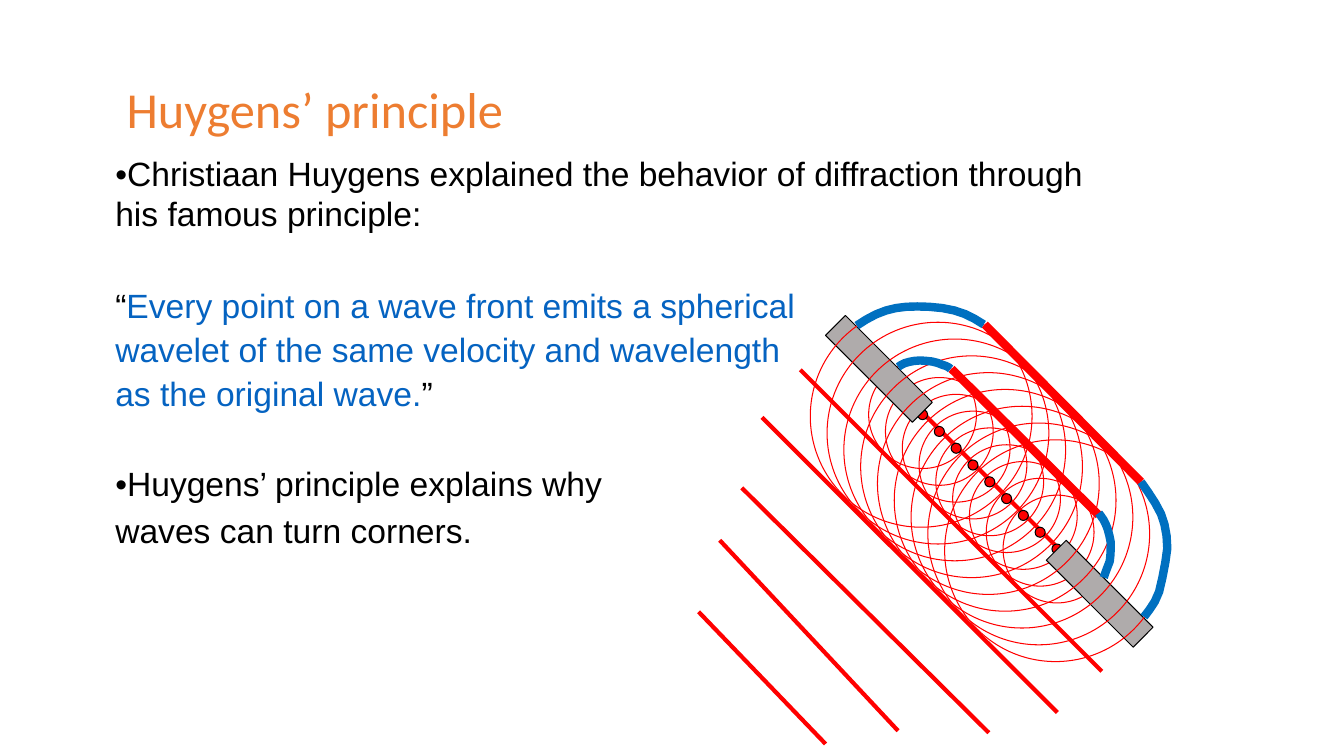
from dataclasses import dataclass

from lxml import etree
from pptx import Presentation
from pptx.dml.color import RGBColor
from pptx.enum.shapes import MSO_CONNECTOR, MSO_SHAPE
from pptx.enum.text import MSO_ANCHOR, MSO_AUTO_SIZE, PP_ALIGN
from pptx.oxml.ns import qn
from pptx.util import Pt

OVAL, RECTANGLE = MSO_SHAPE.OVAL, MSO_SHAPE.RECTANGLE
STRAIGHT = MSO_CONNECTOR.STRAIGHT
LEFT, TOP, BOTTOM = PP_ALIGN.LEFT, MSO_ANCHOR.TOP, MSO_ANCHOR.BOTTOM
NO_AUTOFIT = MSO_AUTO_SIZE.NONE

COLORS = {
    "white": "FFFFFF", "black": "000000", "title": "ED7D31", "quote": "0563C1",
    "wave": "FF0000", "bend": "0070C0", "barrier": "AFABAB",
}


@dataclass(frozen=True)
class Line:
    x1: float
    y1: float
    x2: float
    y2: float
    width: float = 3


@dataclass(frozen=True)
class Box:
    left: float
    top: float
    width: float
    height: float
    rotation: float = 0


@dataclass(frozen=True)
class Statement:
    runs: tuple[tuple[str, str], ...]
    space_before: float


STATEMENTS = (
    Statement((("•Christiaan Huygens explained the behavior of diffraction "
                "through his famous principle:", "black"),), 4.8),
    Statement((("“", "black"),
               ("Every point on a wave front emits a spherical", "quote")), 36.4),
    Statement((("wavelet of the same velocity and wavelength", "quote"),), 2.6),
    Statement((("as the original wave.", "quote"), ("”", "black")), 2.6),
    Statement((("•Huygens’ principle explains why", "black"),), 36),
    Statement((("waves can turn corners.", "black"),), 4.8),
)

APERTURE = Line(658, 293.8, 755.3, 391)
INCOMING_FRONTS = (
    Line(571.7, 264.2, 787, 479.5),
    Line(544.3, 298.1, 755.3, 509),
    Line(529.9, 348.5, 706.3, 523.4),
    Line(514.1, 385.9, 641.5, 522),
    Line(499, 437, 589.7, 531.4),
)
OUTGOING_FRONTS = (
    Line(703.4, 231.8, 815, 344.2, 6),
    Line(679.7, 263.5, 784.8, 367.9, 6),
)
BARRIERS = (Box(741.6, 414, 87.8, 20.2, 45), Box(583.9, 253.4, 87.8, 20.2, 45))

# Wavelet sources run diagonally along the aperture
SOURCES = [(659 + 12 * i, 296.2 + 12 * i) for i in range(9)]
LARGE_CENTERS = [(x - 1, y + 1.2) for x, y in SOURCES]
DOT, SMALL_WAVELET, LARGE_WAVELET = 7.2, 77, 158.4

# Cubic Bezier chains: a start point, then three points for each curve
BENT_FRONTS = (
    ((641.5, 262.1), (643.7, 260.6), (645.8, 259.2), (649.4, 258.5),
     (652.3, 257.8), (657.4, 257), (661.7, 257.8), (665.3, 257.8),
     (670.3, 259.2), (673.2, 260.6), (676.1, 261.4), (677.5, 262.1),
     (679, 263.5)),
    ((784.8, 366.5), (786.2, 368.6), (788.4, 370.8), (789.8, 374.4),
     (791.3, 377.3), (792.7, 383), (793.4, 387.4), (793.4, 391.7),
     (793.4, 396.7), (792.7, 401), (791.3, 404.6), (789.8, 408.2),
     (788.4, 412.6)),
    ((612, 232.6), (618.5, 228.2), (625.7, 223.9), (632.9, 221.8),
     (640.1, 219.6), (646.6, 218.9), (655.2, 218.9), (663.1, 218.9),
     (673.9, 219.6), (681.8, 221.8), (689.8, 223.9), (696.2, 227.5),
     (702.7, 231.8)),
    ((815, 344.2), (820.1, 351.4), (825.8, 359.3), (829.4, 367.2),
     (832.3, 374.4), (833.8, 382.3), (833.8, 391.7), (833, 400.3),
     (830.2, 414), (828, 422.6), (825.4, 430.6), (820.8, 435.8),
     (817.2, 440.6)),
)


def rgb(color: str) -> RGBColor:
    return RGBColor.from_string(COLORS[color])


def add_text(paragraph, text: str, *, font: str, size: float, color: str) -> None:
    run = paragraph.add_run()
    run.text = text
    run.font.name = font
    run.font.size = Pt(size)
    run.font.color.rgb = rgb(color)


def style(shape, fill: str | None, line: str | None, width: float = 0.75) -> None:
    shape.shadow.inherit = False
    if fill:
        shape.fill.solid()
        shape.fill.fore_color.rgb = rgb(fill)
    else:
        shape.fill.background()
    if line:
        shape.line.color.rgb = rgb(line)
        shape.line.width = Pt(width)
    else:
        shape.line.fill.background()


def add_box(shapes, kind, box: Box, fill: str | None, line: str | None):
    shape = shapes.add_shape(kind, Pt(box.left), Pt(box.top),
                             Pt(box.width), Pt(box.height))
    shape.rotation = box.rotation
    style(shape, fill, line)
    return shape


def add_circle(shapes, center: tuple[float, float], size: float,
               fill: str | None, line: str) -> None:
    x, y = center
    add_box(shapes, OVAL, Box(x - size / 2, y - size / 2, size, size), fill, line)


def add_front(shapes, front: Line) -> None:
    connector = shapes.add_connector(STRAIGHT, Pt(front.x1), Pt(front.y1),
                                     Pt(front.x2), Pt(front.y2))
    connector.line.color.rgb = rgb("wave")
    connector.line.width = Pt(front.width)
    etree.SubElement(connector.element.spPr, qn("a:effectLst"))


def curve_points(chain: tuple, steps: int = 3) -> list[tuple[int, int]]:
    points = []
    for start in range(0, len(chain) - 1, 3):
        controls = chain[start:start + 4]
        for step in range(1, steps + 1):
            t = step / steps
            weights = ((1 - t) ** 3, 3 * t * (1 - t) ** 2,
                       3 * t ** 2 * (1 - t), t ** 3)
            x, y = (sum(w * c[axis] for w, c in zip(weights, controls))
                    for axis in (0, 1))
            points.append((Pt(x), Pt(y)))
    return points


def add_bent_front(shapes, chain: tuple) -> None:
    builder = shapes.build_freeform(Pt(chain[0][0]), Pt(chain[0][1]))
    builder.add_line_segments(curve_points(chain), close=False)
    style(builder.convert_to_shape(), None, "bend", 6)


def add_title(slide) -> None:
    title = slide.shapes.title
    title.left, title.top, title.width, title.height = (
        Pt(83.2), Pt(32.4), Pt(702.7), Pt(70.6))
    frame = title.text_frame
    frame.auto_size = NO_AUTOFIT
    frame.vertical_anchor = BOTTOM
    heading = frame.paragraphs[0]
    heading.alignment = LEFT
    heading.line_spacing = 0.9
    add_text(heading, "Huygens’ principle", font="Calibri", size=36, color="title")


def add_explanation(shapes) -> None:
    panel = add_box(shapes, RECTANGLE, Box(75.3, 105.8, 710.6, 418.3), "white", None)
    frame = panel.text_frame
    frame.word_wrap = True
    frame.vertical_anchor = TOP
    for index, statement in enumerate(STATEMENTS):
        paragraph = frame.add_paragraph() if index else frame.paragraphs[0]
        paragraph.alignment = LEFT
        paragraph.space_before = Pt(statement.space_before)
        for text, color in statement.runs:
            add_text(paragraph, text, font="Arial", size=24, color=color)


def main() -> None:
    deck = Presentation()
    deck.slide_width, deck.slide_height = Pt(960), Pt(540)
    slide = deck.slides.add_slide(deck.slide_layouts[5])
    shapes = slide.shapes

    # Title and explanation
    add_title(slide)
    add_explanation(shapes)

    # Aperture with its sources and small wavelets
    add_front(shapes, APERTURE)
    for source in SOURCES:
        wavelet = shapes.add_group_shape().shapes
        add_circle(wavelet, source, SMALL_WAVELET, None, "wave")
        add_circle(wavelet, source, DOT, "wave", "black")

    # Straight wave fronts and barriers
    for front in INCOMING_FRONTS + OUTGOING_FRONTS:
        add_front(shapes, front)
    for barrier in BARRIERS:
        add_box(shapes, RECTANGLE, barrier, "barrier", "black")

    # Large wavelets and fronts bent around the corners
    for center in LARGE_CENTERS:
        add_circle(shapes, center, LARGE_WAVELET, None, "wave")
    for chain in BENT_FRONTS:
        add_bent_front(shapes, chain)

    deck.save("out.pptx")


if __name__ == "__main__":
    main()
